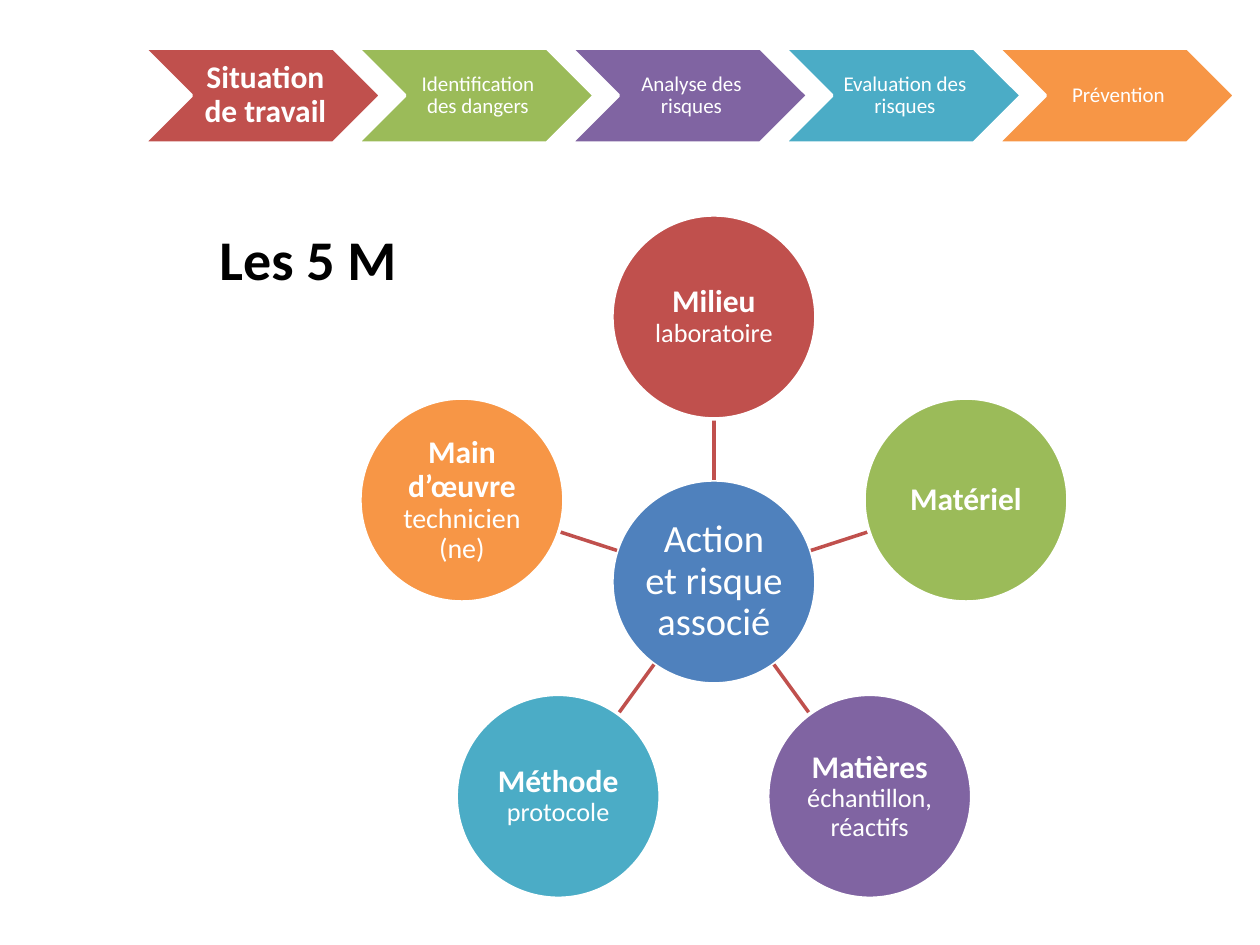
from math import cos, radians, sin

from pptx import Presentation
from pptx.dml.color import RGBColor
from pptx.enum.shapes import MSO_CONNECTOR as CONN, MSO_SHAPE as SHAPE
from pptx.enum.text import MSO_ANCHOR as ANCHOR, PP_ALIGN as ALIGN
from pptx.oxml.ns import qn
from pptx.util import Pt

EMU_PER_PX = 914400 / 126
FONT = "Calibri"
WHITE, BLACK = "FFFFFF", "000000"
BLUE, RED, GREEN = "4F81BD", "C0504D", "9BBB59"
PURPLE, TEAL, ORANGE = "8064A2", "4BACC6", "F79646"

# Process steps: text, fill, size, bold
STEPS = [
    ("Situation de travail", RED, 18, True),
    ("Identification des dangers", GREEN, 12, False),
    ("Analyse des risques", PURPLE, 12, False),
    ("Evaluation des risques", TEAL, 12, False),
    ("Prévention", ORANGE, 12, False),
]
STEP_LEFT, STEP_TOP, STEP_W, STEP_H = 144, 48, 237, 95
STEP_SPAN = 854  # from the first left edge to the last

# The five M, clockwise from the top: name, detail, detail size, fill
CAUSES = [
    ("Milieu", "laboratoire", 15, RED),
    ("Matériel", "", 15, GREEN),
    ("Matières", "échantillon, réactifs", 15, PURPLE),
    ("Méthode", "protocole", 15, TEAL),
    ("Main d’œuvre", "technicien (ne)", 16, ORANGE),
]
HUB_X, HUB_Y, DIAMETER, ORBIT = 714, 582, 204, 265
SPOKE_START, SPOKE_END = 102, 163


def px(n):
    return round(n * EMU_PER_PX)


def color(hex_code):
    return RGBColor.from_string(hex_code)


def write(sp, runs, ink=WHITE, inset=None, spacing=None):
    """Fill a shape with one centred paragraph of (text, size, bold) runs."""
    tf = sp.text_frame
    tf.word_wrap = True
    tf.vertical_anchor = ANCHOR.MIDDLE
    if inset:
        left, rest = inset
        tf.margin_left = px(left)
        tf.margin_right = tf.margin_top = tf.margin_bottom = px(rest)
    p = tf.paragraphs[0]
    p.alignment = ALIGN.CENTER
    p.line_spacing = spacing
    for text, size, bold in runs:
        r = p.add_run()
        r.text = text
        r.font.name, r.font.size, r.font.bold = FONT, Pt(size), bold
        r.font.color.rgb = color(ink)


def add_block(slide, kind, x, y, w, h, fill, runs, inset):
    sp = slide.shapes.add_shape(kind, px(x), px(y), px(w), px(h))
    sp.shadow.inherit = False
    sp.fill.solid()
    sp.fill.fore_color.rgb = color(fill)
    sp.line.color.rgb = color(WHITE)
    sp.line.width = Pt(2)
    write(sp, runs, inset=inset, spacing=0.9)


def add_circle(slide, cx, cy, fill, runs, inset):
    add_block(slide, SHAPE.OVAL, cx - DIAMETER / 2, cy - DIAMETER / 2,
              DIAMETER, DIAMETER, fill, runs, inset)


def add_spoke(slide, start, end):
    line = slide.shapes.add_connector(CONN.STRAIGHT, *map(px, start + end))
    line.line.color.rgb = color(RED)
    line.line.width = Pt(2)
    sp_pr = line._element.spPr
    sp_pr.append(sp_pr.makeelement(qn("a:effectLst"), {}))


def add_title(slide, text):
    sp = slide.shapes.add_textbox(px(184), px(214), px(248), px(89))
    write(sp, [(text, 32, True)], ink=BLACK)


def add_steps(slide):
    pitch = STEP_SPAN / (len(STEPS) - 1)
    for i, (text, fill, size, bold) in enumerate(STEPS):
        inset = (10, 4) if bold else (6, 2)
        add_block(slide, SHAPE.CHEVRON, STEP_LEFT + i * pitch, STEP_TOP,
                  STEP_W, STEP_H, fill, [(text, size, bold)], inset)


def around_hub(angle, radius):
    return HUB_X + radius * cos(angle), HUB_Y + radius * sin(angle)


def add_wheel(slide):
    add_circle(slide, HUB_X, HUB_Y, BLUE,
               [("Action et risque associé", 22, False)], (2, 2))
    for i, (name, detail, size, fill) in enumerate(CAUSES):
        angle = radians(i * 360 / len(CAUSES) - 90)
        add_spoke(slide, around_hub(angle, SPOKE_START),
                  around_hub(angle, SPOKE_END))
        runs = [(name, 18, True)]
        if detail:
            runs = [(name + " ", 18, True), (detail, size, False)]
        add_circle(slide, *around_hub(angle, ORBIT), fill, runs, (1, 1))


def main():
    prs = Presentation()
    prs.slide_width, prs.slide_height = px(1260), px(945)
    slide = prs.slides.add_slide(prs.slide_layouts[6])
    add_wheel(slide)
    add_title(slide, "Les 5 M")
    add_steps(slide)
    prs.save("out.pptx")


if __name__ == "__main__":
    main()
